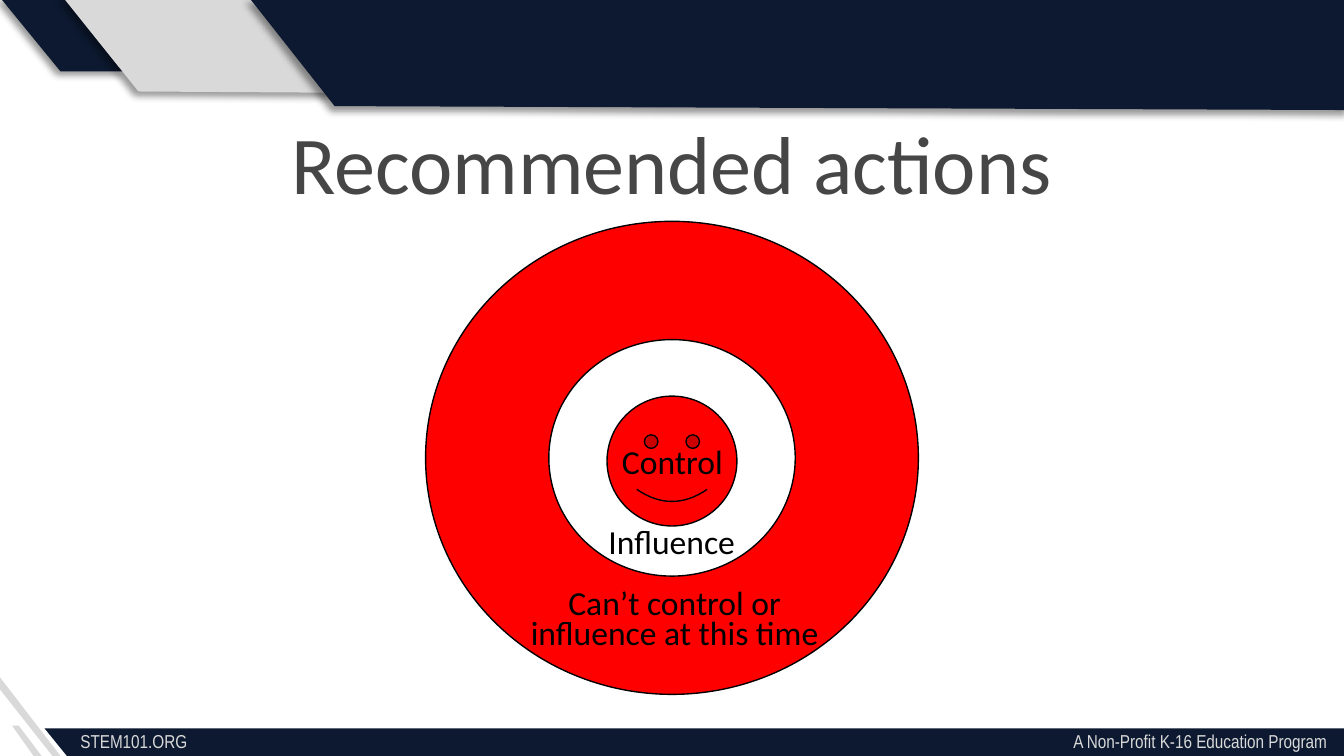
from lxml import etree
from pptx import Presentation
from pptx import util as u
from pptx.dml.color import RGBColor
from pptx.enum import shapes, text
from pptx.oxml import ns

NAVY = RGBColor(0x0C, 0x19, 0x30)
GREY = RGBColor(0xD9, 0xD9, 0xD9)
RED = RGBColor(0xFF, 0x00, 0x00)
WHITE = RGBColor(0xFF, 0xFF, 0xFF)
BLACK = RGBColor(0x00, 0x00, 0x00)
TITLE_GREY = RGBColor(0x46, 0x46, 0x46)

WIDTH, HEIGHT = 720, 405
TITLE = "Recommended actions"
FOOTER = "STEM101.ORG\tA Non-Profit K-16 Education Program"
FOOTER_TAB = 667.7
BANDS = [
    (NAVY, True, [(32.4, 38.2), (0, -1.4), (34.6, -1.4), (67, 38.2)]),
    (GREY, True, [(74.2, 49), (33.8, -1.4), (146.9, -1.4), (186.5, 49.7)]),
    (GREY, False, [(22.3, 405), (18, 405), (6.5, 388.8), (10.1, 388.8)]),
    (GREY, False, [(32.4, 405), (28.1, 405), (0, 369.4), (0, 362.9)]),
    (NAVY, True, [(179.3, 56.9), (133.9, -0.7), (721.4, -0.7), (722.9, 59)]),
    (NAVY, False, [(724.3, 406.8), (36.7, 406.1), (23.8, 390.2), (725, 390.2)]),
]
TARGET_CENTER = (360, 245.3)
TARGET_SIZE = (264, 253.4)
RINGS = [(RED, 1), (WHITE, 0.5)]
FACE = (325.2, 212.2, 69.6, 69.6)
LABELS = [
    ("Control", (315.2, 232.6, 90, 29), None),
    ("Influence", (306.2, 275.2, 107.3, 29), None),
    ("Can’t control or influence at this time", (272.9, 313.3, 177.1, 40.3), 16),
]


def points(values):
    return [u.Pt(value) for value in values]


def write(box, words, size, color, font="Calibri", align=text.PP_ALIGN.CENTER,
          anchor=text.MSO_ANCHOR.MIDDLE, spacing=None, tab=None):
    frame = box.text_frame
    frame.word_wrap = True
    frame.vertical_anchor = anchor
    para = frame.paragraphs[0]
    para.alignment = align
    if spacing:
        para.line_spacing = u.Pt(spacing)
    if tab:
        stops = etree.SubElement(para._p.get_or_add_pPr(), ns.qn("a:tabLst"))
        etree.SubElement(stops, ns.qn("a:tab"), pos=str(u.Pt(tab)), algn="r")
    span = para.add_run()
    span.text = words
    span.font.size = u.Pt(size)
    span.font.name = font
    span.font.color.rgb = color


def paint(shape, fill, line=None):
    shape.shadow.inherit = False
    shape.fill.solid()
    shape.fill.fore_color.rgb = fill
    if line is None:
        shape.line.fill.background()
    else:
        shape.line.color.rgb = line
        shape.line.width = u.Pt(0.75)


def cast_shadow(shape):
    effects = shape._element.spPr.find(ns.qn("a:effectLst"))
    shadow = etree.SubElement(effects, ns.qn("a:outerShdw"), blurRad=str(u.Pt(4)),
                              dist=str(u.Pt(3)), dir=str(135 * 60000))
    tint = etree.SubElement(shadow, ns.qn("a:srgbClr"), val=str(BLACK))
    etree.SubElement(tint, ns.qn("a:alpha"), val="40000")


def add_band(page, fill, shadowed, corners):
    start, *others = [points(corner) for corner in corners]
    builder = page.shapes.build_freeform(*start)
    builder.add_line_segments(others, close=True)
    band = builder.convert_to_shape()
    paint(band, fill)
    if shadowed:
        cast_shadow(band)


def main():
    deck = Presentation()
    deck.slide_width, deck.slide_height = points((WIDTH, HEIGHT))
    page = deck.slides.add_slide(deck.slide_layouts[5])

    for band in BANDS:
        add_band(page, *band)

    footer = page.shapes.add_textbox(*points((36, 387.4, 684, 19.4)))
    write(footer, FOOTER, 10, GREY, font="Arial Narrow", align=text.PP_ALIGN.LEFT,
          anchor=text.MSO_ANCHOR.TOP, tab=FOOTER_TAB)

    for fill, scale in RINGS:
        size = [length * scale for length in TARGET_SIZE]
        corner = [middle - length / 2 for middle, length in zip(TARGET_CENTER, size)]
        ring = page.shapes.add_shape(shapes.MSO_SHAPE.OVAL, *points(corner + size))
        paint(ring, fill, BLACK)

    face = page.shapes.add_shape(shapes.MSO_SHAPE.SMILEY_FACE, *points(FACE))
    face.adjustments[0] = 0.05
    paint(face, RED, BLACK)

    for words, place, spacing in LABELS:
        label = page.shapes.add_textbox(*points(place))
        write(label, words, 18, BLACK, spacing=spacing)

    title = page.shapes.title
    title.left, title.top, title.width, title.height = points((54, 52.6, 612, 68.4))
    write(title, TITLE, 44, TITLE_GREY)

    deck.save("out.pptx")


if __name__ == "__main__":
    main()
